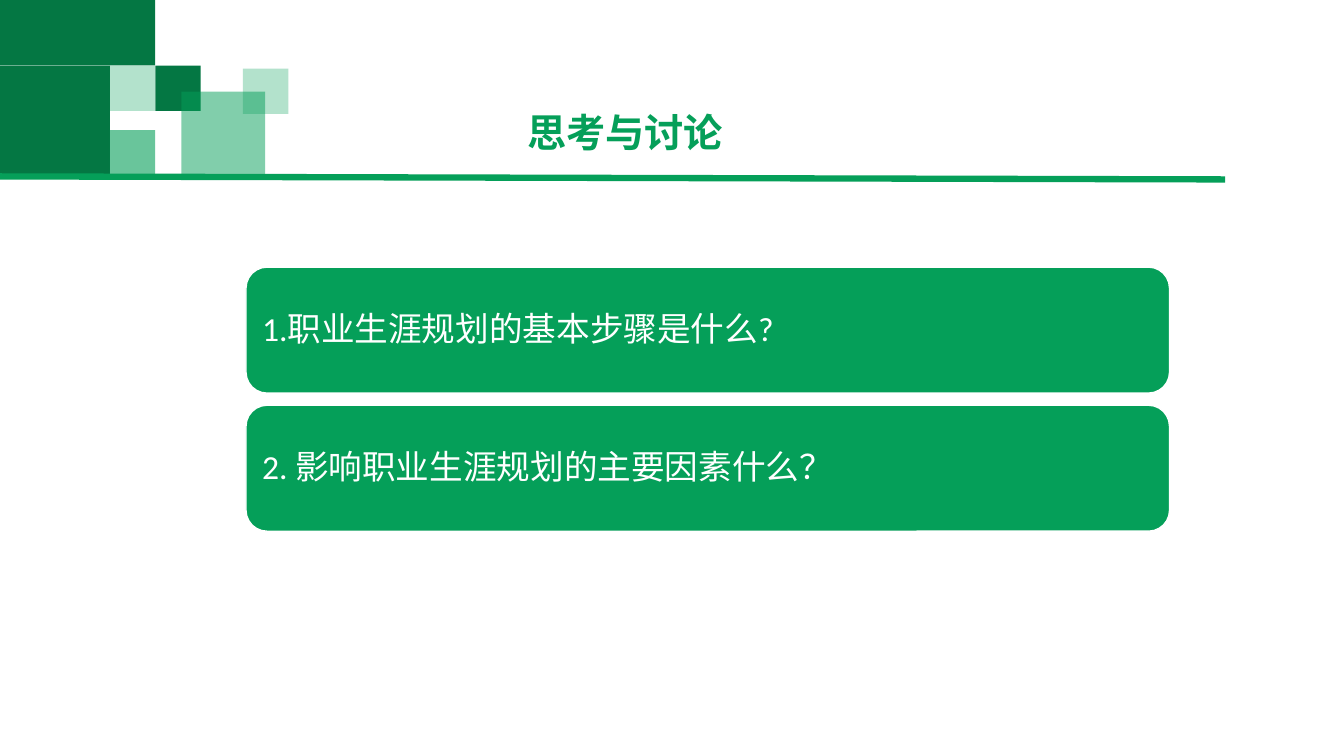
import pptx
import pptx.util
import pptx.dml.color
import pptx.enum.shapes
import pptx.enum.text
import pptx.oxml.ns
import lxml.etree

Inches = pptx.util.Inches
Pt = pptx.util.Pt

TITLE = "思考与讨论"
QUESTIONS = [
    "1.职业生涯规划的基本步骤是什么?",
    "2. 影响职业生涯规划的主要因素什么？",
]
COLOURS = {"dark": "047743", "green": "059F59", "white": "FFFFFF"}
FONT = "Calibri"

# left, top, width, height, colour, opacity in percent
CORNER_BLOCKS = [
    (0, 0.65, 1.09, 1.09, "dark", 100),
    (0, 0, 1.54, 0.65, "dark", 100),
    (1.09, 0.65, 0.45, 0.45, "green", 30),
    (1.54, 0.65, 0.45, 0.45, "dark", 100),
    (1.09, 1.29, 0.45, 0.45, "green", 60),
    (1.8, 0.91, 0.83, 0.83, "green", 50),
    (2.41, 0.68, 0.45, 0.45, "green", 30),
]
CARD_LEFT, CARD_TOP, CARD_WIDTH, CARD_HEIGHT = 2.44, 2.65, 9.16, 1.25
CARD_PITCH = 1.37
CARD_MARGIN = 0.16


def colour(name):
    return pptx.dml.color.RGBColor.from_string(COLOURS[name])


def add_filled_shape(slide, kind, box, fill, opacity=100):
    shape = slide.shapes.add_shape(kind, *map(Inches, box))
    shape.shadow.inherit = False
    shape.fill.solid()
    shape.fill.fore_color.rgb = colour(fill)
    shape.line.fill.background()
    if opacity < 100:
        colour_element = shape.fill._xPr.find(".//" + pptx.oxml.ns.qn("a:srgbClr"))
        alpha = lxml.etree.SubElement(colour_element, pptx.oxml.ns.qn("a:alpha"))
        alpha.set("val", str(opacity * 1000))
    return shape


def write_text(frame, text, size, colour_name, bold=False):
    frame.word_wrap = True
    paragraph = frame.paragraphs[0]
    paragraph.text = text
    paragraph.alignment = pptx.enum.text.PP_ALIGN.LEFT
    paragraph.line_spacing = 0.9
    paragraph.font.name = FONT
    paragraph.font.size = Pt(size)
    paragraph.font.bold = bold
    paragraph.font.color.rgb = colour(colour_name)
    return paragraph


def add_header(slide):
    for *box, fill, opacity in CORNER_BLOCKS:
        add_filled_shape(slide, pptx.enum.shapes.MSO_SHAPE.RECTANGLE, box, fill, opacity)

    title = slide.shapes.add_textbox(Inches(5.13), Inches(1.08), Inches(4.33), Inches(0.52))
    paragraph = write_text(title.text_frame, TITLE, 28, "green", bold=True)
    paragraph.space_before = Pt(10)

    rule = slide.shapes.add_connector(
        pptx.enum.shapes.MSO_CONNECTOR.STRAIGHT,
        Inches(0), Inches(1.75), Inches(12.15), Inches(1.78))
    rule.line.color.rgb = colour("green")
    rule.line.width = Pt(4.5)
    lxml.etree.SubElement(rule._element.spPr, pptx.oxml.ns.qn("a:effectLst"))


def add_question_card(slide, index, question):
    box = (CARD_LEFT, CARD_TOP + index * CARD_PITCH, CARD_WIDTH, CARD_HEIGHT)
    card = add_filled_shape(slide, pptx.enum.shapes.MSO_SHAPE.ROUNDED_RECTANGLE, box, "green")
    card.line.color.rgb = colour("white")
    card.line.width = Pt(1)
    frame = card.text_frame
    # The preset already insets its text by the corner curve, about 0.06 inches.
    frame.margin_left = frame.margin_right = Inches(CARD_MARGIN - 0.06)
    frame.vertical_anchor = pptx.enum.text.MSO_ANCHOR.MIDDLE
    write_text(frame, question, 24, "white")


def main():
    presentation = pptx.Presentation()
    presentation.slide_width = Inches(13.33)
    presentation.slide_height = Inches(7.5)
    slide = presentation.slides.add_slide(presentation.slide_layouts[6])
    add_header(slide)
    for index, question in enumerate(QUESTIONS):
        add_question_card(slide, index, question)
    presentation.save("out.pptx")


if __name__ == "__main__":
    main()
